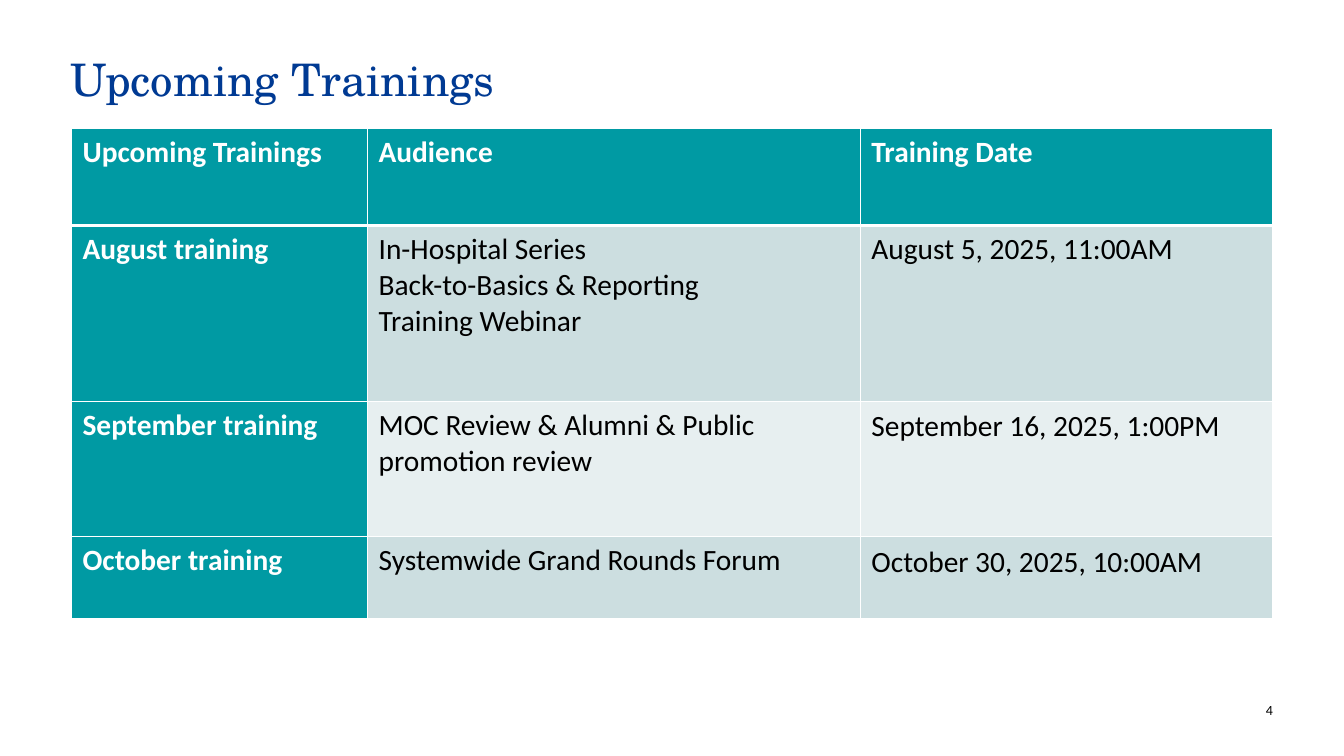
"""Build the slide of upcoming trainings with its schedule table."""
from lxml import etree
from pptx import Presentation
from pptx.dml.color import RGBColor
from pptx.enum.text import MSO_ANCHOR, MSO_AUTO_SIZE, PP_ALIGN
from pptx.oxml.ns import qn
from pptx.util import Pt

TOP = MSO_ANCHOR.TOP
FIXED = MSO_AUTO_SIZE.NONE
LEFT, RIGHT = PP_ALIGN.LEFT, PP_ALIGN.RIGHT
TEAL, WHITE, BLACK, NAVY = "009AA3", "FFFFFF", "000000", "003A93"
BANDS = ["CCDEE0", "E7EFF0"]


def color(code):
    return RGBColor.from_string(code)


def write(frame, text, size=21, face="Calibri", ink=BLACK, bold=False,
          align=LEFT, space=None, pad=(0, 0)):
    frame.word_wrap = True
    frame.vertical_anchor = TOP
    frame.margin_left = frame.margin_right = Pt(pad[0])
    frame.margin_top = frame.margin_bottom = Pt(pad[1])
    para = frame.paragraphs[0]
    para.text = text
    para.alignment = align
    para.line_spacing = space
    for run in para.runs:
        run.font.size = Pt(size)
        run.font.name = face
        run.font.bold = bold
        run.font.color.rgb = color(ink)


deck = Presentation()
deck.slide_width, deck.slide_height = Pt(960), Pt(540)
slide = deck.slides.add_slide(deck.slide_layouts[5])

title = slide.shapes.title
title.left, title.top, title.width, title.height = Pt(50.4), Pt(41), Pt(858), Pt(75.6)
write(title.text_frame, "Upcoming Trainings", size=32, face="TeX Gyre Schola",
      ink=NAVY, space=0.9)
title.text_frame.auto_size = FIXED

rows = [
    ["Upcoming Trainings", "Audience", "Training Date"],
    ["August training",
     "In-Hospital Series\vBack-to-Basics & Reporting\vTraining Webinar",
     "August 5, 2025, 11:00AM"],
    ["September training", "MOC Review & Alumni & Public promotion review",
     "September 16, 2025, 1:00PM"],
    ["October training", "Systemwide Grand Rounds Forum",
     "October 30, 2025, 10:00AM"],
]
widths = [211.5, 352, 294.5]
heights = [69, 125.5, 97, 58.5]
table = slide.shapes.add_table(len(rows), len(widths), Pt(51), Pt(92),
                               Pt(sum(widths)), Pt(sum(heights))).table
table.first_col = True
for col, width in zip(table.columns, widths):
    col.width = Pt(width)
for row, height in zip(table.rows, heights):
    row.height = Pt(height)

for r, texts in enumerate(rows):
    for c, text in enumerate(texts):
        cell = table.cell(r, c)
        head = r == 0 or c == 0
        write(cell.text_frame, text, ink=WHITE if head else BLACK, bold=head,
              space=1.05 if r > 1 and c == 2 else None)
        cell.margin_left = cell.margin_right = Pt(8)
        cell.margin_top = cell.margin_bottom = Pt(4.3)
        cell.vertical_anchor = TOP
        cell.fill.solid()
        cell.fill.fore_color.rgb = color(TEAL if head else BANDS[(r - 1) % 2])
        props = cell._tc.get_or_add_tcPr()
        for i, side in enumerate(["lnL", "lnR", "lnT", "lnB"]):
            thick = (r, side) in [(0, "lnB"), (1, "lnT")]
            line = etree.Element(qn("a:" + side), w=str(Pt(3 if thick else 1)))
            fill = etree.SubElement(line, qn("a:solidFill"))
            etree.SubElement(fill, qn("a:srgbClr"), val=WHITE)
            props.insert(i, line)

page = slide.shapes.add_textbox(Pt(882), Pt(501), Pt(27.3), Pt(12.2))
write(page.text_frame, "4", size=10, align=RIGHT)

deck.save("out.pptx")
